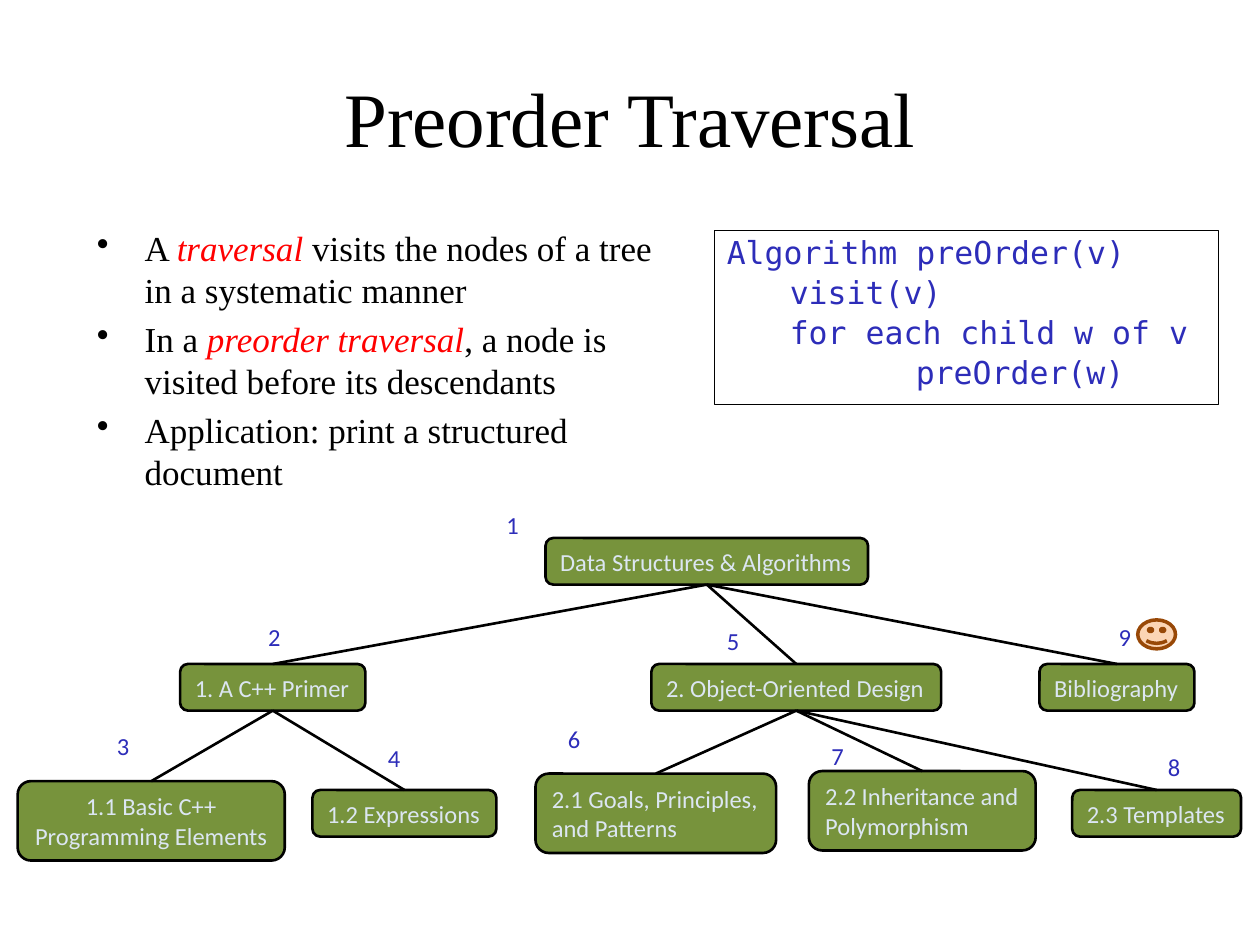
from lxml import etree
from pptx import Presentation
from pptx.dml.color import RGBColor
from pptx.enum.shapes import MSO_CONNECTOR, MSO_SHAPE
from pptx.enum.text import MSO_ANCHOR, MSO_AUTO_SIZE as FIT, PP_ALIGN
from pptx.oxml.ns import qn
from pptx.util import Inches, Pt

COLORS = {"black": "000000", "red": "FF0000", "blue": "2D2DB9", "green": "77933C",
          "pale": "DCE6F2", "peach": "FCD5B5", "brown": "984807"}
SERIF, SANS, MONO = "Times New Roman", "Calibri", "DejaVu Sans Mono"


def add_span(para, text, font, size, color, italic=False):
    span = para.add_run()
    span.text = text
    for name, value in {"name": font, "size": Pt(size), "italic": italic}.items():
        setattr(span.font, name, value)
    span.font.color.rgb = RGBColor.from_string(COLORS[color])


def add_panel(kind, place, line, width, fill=None):
    """Add a preset shape, or a text box when kind is None."""
    place = [Inches(value) for value in place]
    if kind is None:
        return page.shapes.add_textbox(*place)
    panel = page.shapes.add_shape(kind, *place)
    panel.shadow.inherit = False
    panel.line.color.rgb = RGBColor.from_string(COLORS[line])
    panel.line.width = Pt(width)
    if fill:
        panel.fill.solid()
        panel.fill.fore_color.rgb = RGBColor.from_string(COLORS[fill])
    else:
        panel.fill.background()
    return panel


deck = Presentation()
deck.slide_width, deck.slide_height = Inches(10), Inches(7.5)
page = deck.slides.add_slide(deck.slide_layouts[6])

# Title
title = add_panel(None, (0.5, 0.3, 9, 1.25), None, 0).text_frame
title.word_wrap = True
title.vertical_anchor = MSO_ANCHOR.MIDDLE
title.paragraphs[0].alignment = PP_ALIGN.CENTER
add_span(title.paragraphs[0], "Preorder Traversal", SERIF, 44, "black")

# Bullets: text before, emphasised term, text after
bullets = [
    ("A ", "traversal", " visits the nodes of a tree in a systematic manner"),
    ("In a ", "preorder traversal", ", a node is visited before its descendants"),
    ("Application: print a structured document", "", ""),
]
body = add_panel(None, (0.67, 1.75, 4.67, 2.5), None, 0).text_frame
body.word_wrap = True
for index, (before, term, after) in enumerate(bullets):
    para = body.add_paragraph() if index else body.paragraphs[0]
    para.space_before = Pt(4)
    props = para._p.get_or_add_pPr()
    props.set("marL", str(Inches(0.38)))
    props.set("indent", str(-Inches(0.38)))
    etree.SubElement(props, qn("a:buChar")).set("char", "•")
    for text, color in ((before, "black"), (term, "red"), (after, "black")):
        if text:
            add_span(para, text, SERIF, 20, color, italic=color == "red")

# Algorithm: indent and code
code = [(0, "Algorithm preOrder(v)"), (0.5, "visit(v)"),
        (0.5, "for each child w of v"), (1.5, "preOrder(w)")]
frame = add_panel(MSO_SHAPE.RECTANGLE, (5.67, 1.83, 4, 1.38), "black", 0.75).text_frame
for name, value in {"word_wrap": True, "vertical_anchor": MSO_ANCHOR.TOP,
                    "auto_size": FIT.SHAPE_TO_FIT_TEXT}.items():
    setattr(frame, name, value)
for index, (indent, text) in enumerate(code):
    para = frame.add_paragraph() if index else frame.paragraphs[0]
    for name, value in {"alignment": PP_ALIGN.LEFT, "line_spacing": 0.9,
                        "space_before": Pt(3.6)}.items():
        setattr(para, name, value)
    para._p.get_or_add_pPr().set("marL", str(Inches(indent)))
    add_span(para, text, MONO, 18, "blue")

# Tree nodes in preorder: parent, left, top, width, lines, number position
tree = [
    (None, 4.33, 4.27, 2.56, ["Data Structures & Algorithms"], (3.92, 4)),
    (1, 1.43, 5.27, 1.47, ["1. A C++ Primer"], (2.03, 4.89)),
    (2, 0.14, 6.2, 2.12, ["1.1 Basic C++", "Programming Elements"], (0.83, 5.75)),
    (2, 2.48, 6.27, 1.46, ["1.2 Expressions"], (2.98, 5.85)),
    (1, 5.17, 5.27, 2.3, ["2. Object-Oriented Design"], (5.67, 4.92)),
    (5, 4.25, 6.14, 1.91, ["2.1 Goals, Principles,", "and Patterns"], (4.41, 5.7)),
    (5, 6.42, 6.12, 1.8, ["2.2 Inheritance and", "Polymorphism"], (6.5, 5.83)),
    (5, 8.51, 6.27, 1.34, ["2.3 Templates"], (9.17, 5.92)),
    (1, 8.25, 5.27, 1.23, ["Bibliography"], (8.78, 4.89)),
]
nodes = {}
for number, (parent, left, top, width, lines, spot) in enumerate(tree, 1):
    height = 0.37 if len(lines) == 1 else 0.63
    node = add_panel(MSO_SHAPE.ROUNDED_RECTANGLE, (left, top, width, height),
                     "black", 1.5, "green")
    nodes[number] = node
    label = add_panel(None, (*spot, 0.3, 0.34), None, 0)
    for box, texts, color, anchor in (
            (node, lines, "pale", MSO_ANCHOR.MIDDLE),
            (label, [str(number)], "blue", MSO_ANCHOR.TOP)):
        frame = box.text_frame
        for name, value in {"word_wrap": False, "vertical_anchor": anchor,
                            "auto_size": FIT.SHAPE_TO_FIT_TEXT}.items():
            setattr(frame, name, value)
        for index, text in enumerate(texts):
            para = frame.add_paragraph() if index else frame.paragraphs[0]
            centred = text in ("1.1 Basic C++", "Programming Elements")
            para.alignment = PP_ALIGN.CENTER if centred else PP_ALIGN.LEFT
            add_span(para, text, SANS, 14, color)

    # Edge from the parent's bottom to the node's top
    if parent:
        edge = page.shapes.add_connector(MSO_CONNECTOR.STRAIGHT, 0, 0, 0, 0)
        edge.begin_connect(nodes[parent], 2)
        edge.end_connect(node, 0)
        edge.line.color.rgb = RGBColor.from_string(COLORS["black"])
        edge.line.width = Pt(1.5)
        etree.SubElement(edge._element.spPr, qn("a:effectLst"))

# Smiley at the last visited node
add_panel(MSO_SHAPE.SMILEY_FACE, (9.03, 4.92, 0.3, 0.23), "brown", 2, "peach")

deck.save("out.pptx")
